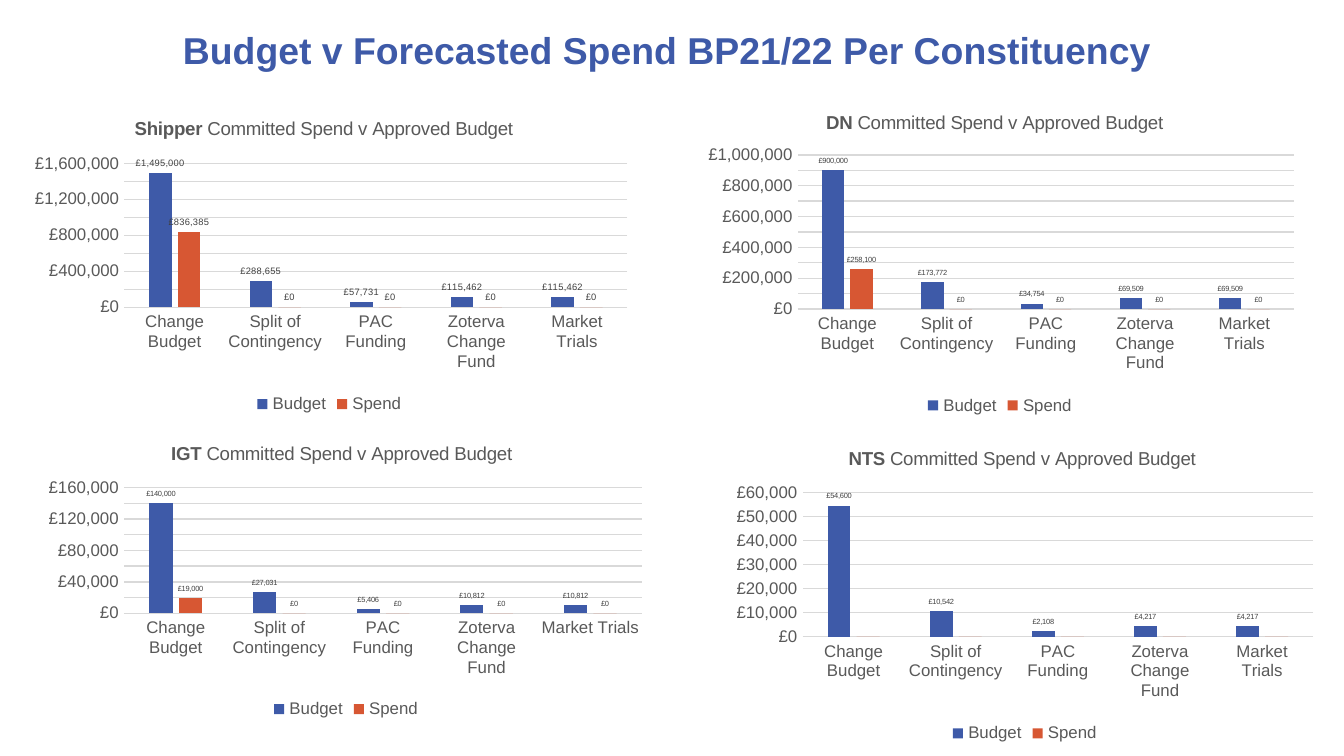
from lxml.etree import SubElement
from pptx import Presentation
from pptx.chart.data import CategoryChartData
from pptx.dml.color import RGBColor
from pptx.enum.chart import XL_CHART_TYPE, XL_LABEL_POSITION, XL_LEGEND_POSITION, XL_TICK_MARK
from pptx.enum.text import MSO_ANCHOR, PP_ALIGN
from pptx.oxml import parse_xml
from pptx.oxml.ns import qn, nsdecls
from pptx.util import Inches, Pt

THEME = {
    "font": "Arial", "blue": "3E5AA8", "red": "D75733", "ink": "000000",
    "text": "595959", "label": "404040", "grid": "D9D9D9",
    "head": 20, "title": 10, "axis": 9, "line": 0.75,
}
MONEY = '"£"#,##0'
CATS = ["Change Budget", "Split of Contingency", "PAC Funding",
        "Zoterva Change Fund", "Market Trials"]


def style(font, size, color, bold=False):
    font.name, font.size, font.bold = THEME["font"], Pt(size), bold
    font.color.rgb = RGBColor.from_string(THEME[color])


def place(part, inner=False, **shares):
    """Fix the layout of a chart part as shares of the chart's size."""
    spot = part.find(qn("c:layout"))
    if spot is None:
        spot = parse_xml(f"<c:layout {nsdecls('c')}/>")
        part.insert(0, spot)
    box = SubElement(spot, qn("c:manualLayout"))
    if inner:
        SubElement(box, qn("c:layoutTarget")).set("val", "inner")
    for key in "xy":
        SubElement(box, qn(f"c:{key}Mode")).set("val", "edge")
    for key, share in shares.items():
        SubElement(box, qn(f"c:{key}")).set("val", str(share))


prs = Presentation()
prs.slide_width = Inches(10)
prs.slide_height = prs.slide_width * 9 // 16
slide = prs.slides.add_slide(prs.slide_layouts[5])

head = slide.shapes.title
head.left, head.top, head.width, head.height = map(Inches, (0.14, 0.14, 9.65, 0.45))
head.text_frame.vertical_anchor = MSO_ANCHOR.MIDDLE
para = head.text_frame.paragraphs[0]
para.alignment = PP_ALIGN.CENTER
run = para.add_run()
run.text = "Budget v Forecasted Spend BP21/22 Per Constituency"
style(run.font, THEME["head"], "blue", True)

# name, chart box, plot shares, title x, axis top and step, label size, budget, first spend
PANELS = [
    ("Shipper", (0.14, 0.74, 4.62, 2.38), (0.17, 0.2, 0.81, 0.45), 0.18, 1600000, 200000, 5,
     (1495000, 288655, 57731, 115462, 115462), 836385),
    ("DN", (5.16, 0.69, 4.56, 2.44), (0.17, 0.19, 0.81, 0.47), 0.21, 1000000, 100000, 4,
     (900000, 173772, 34754, 69509, 69509), 258100),
    ("NTS", (5.39, 3.19, 4.47, 2.38), (0.13, 0.2, 0.85, 0.45), 0.2, 60000, 10000, 4,
     (54600, 10542, 2108, 4217, 4217), 0),
    ("IGT", (0.28, 3.16, 4.59, 2.23), (0.14, 0.21, 0.84, 0.42), 0.21, 160000, 20000, 4,
     (140000, 27031, 5406, 10812, 10812), 19000),
]

for name, box, area, left, peak, step, size, budget, spend in PANELS:
    data = CategoryChartData(number_format=MONEY)
    data.categories = CATS
    data.add_series("Budget", budget)
    data.add_series("Spend", (spend, 0, 0, 0, 0))
    chart = slide.shapes.add_chart(
        XL_CHART_TYPE.COLUMN_CLUSTERED, *map(Inches, box), data).chart
    style(chart.font, THEME["title"], "ink")

    para = chart.chart_title.text_frame.paragraphs[0]
    for text, bold in ((name, True), (" Committed Spend v Approved Budget", False)):
        run = para.add_run()
        run.text = text
        style(run.font, THEME["title"], "text", bold)
    chart.chart_title.include_in_layout = False
    place(chart.chart_title._element, x=left, y=0.04)
    place(chart._chartSpace.chart.plotArea, True, **dict(zip("xywh", area)))

    chart.has_legend = True
    chart.legend.position = XL_LEGEND_POSITION.BOTTOM
    chart.legend.include_in_layout = False
    style(chart.legend.font, THEME["axis"], "text")

    cat, val = chart.category_axis, chart.value_axis
    for axis in (cat, val):
        axis.major_tick_mark = axis.minor_tick_mark = XL_TICK_MARK.NONE
        style(axis.tick_labels.font, THEME["axis"], "text")
    val.minimum_scale, val.maximum_scale, val.major_unit = 0, peak, step
    val.tick_labels.number_format = MONEY
    val.tick_labels.number_format_is_linked = False
    val.format.line.fill.background()
    for line in (cat.format.line, val.major_gridlines.format.line):
        line.color.rgb = RGBColor.from_string(THEME["grid"])
        line.width = Pt(THEME["line"])

    plot = chart.plots[0]
    plot.gap_width, plot.overlap, plot.vary_by_categories = 219, -27, False
    for bars, color in zip(plot.series, ("blue", "red")):
        bars.format.fill.solid()
        bars.format.fill.fore_color.rgb = RGBColor.from_string(THEME[color])
        if any(bars.values):
            labels = bars.data_labels
            labels.show_value = True
            labels.number_format, labels.number_format_is_linked = MONEY, False
            labels.position = XL_LABEL_POSITION.OUTSIDE_END
            style(labels.font, size, "label")

prs.save("out.pptx")
